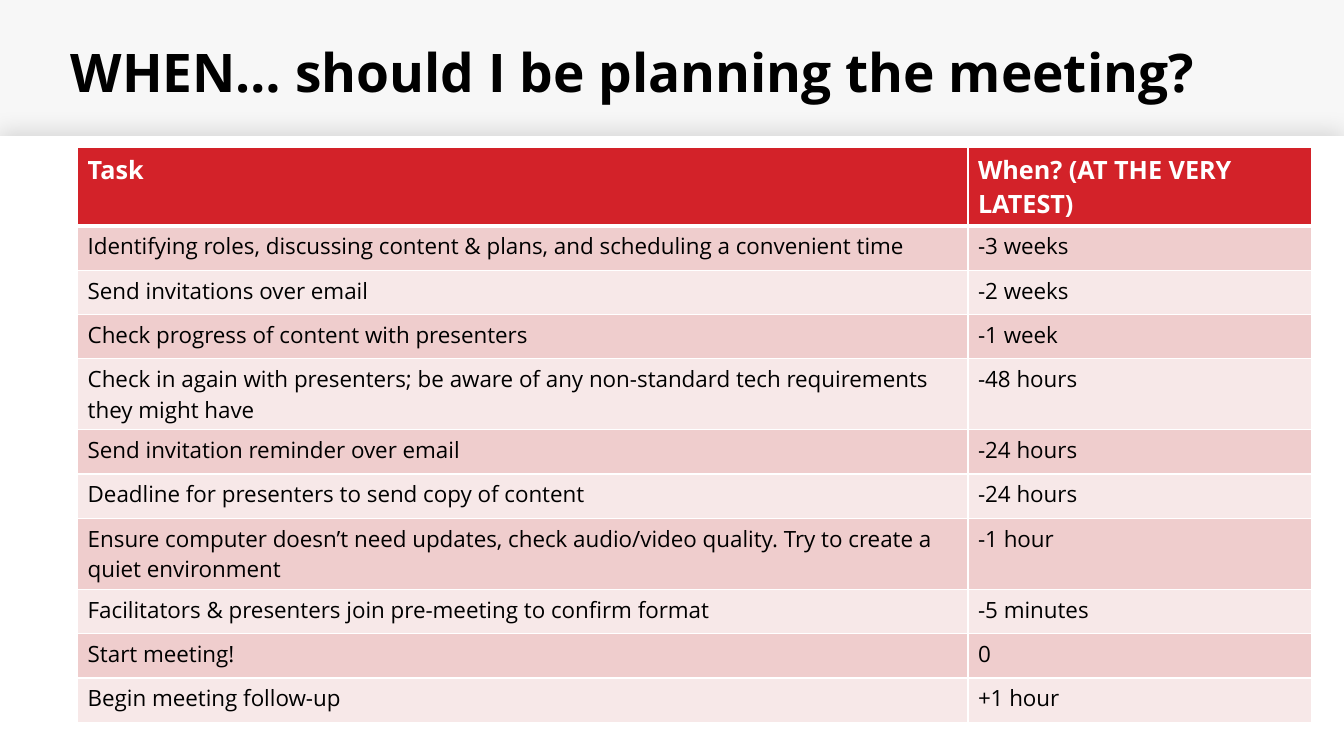
from dataclasses import dataclass

from lxml.etree import SubElement
from pptx import Presentation
from pptx.dml.color import RGBColor
from pptx.enum.shapes import MSO_SHAPE
from pptx.enum.text import MSO_ANCHOR, MSO_AUTO_SIZE, PP_ALIGN
from pptx.oxml.ns import qn
from pptx.shapes.autoshape import Shape
from pptx.slide import Slide
from pptx.table import _Cell
from pptx.text.text import _Paragraph
from pptx.util import Emu, Pt

SCALE = 9144
FONT = "Open Sans"
BLACK = RGBColor(0x00, 0x00, 0x00)
WHITE = RGBColor(0xFF, 0xFF, 0xFF)
GREY = RGBColor(0xF7, 0xF7, 0xF7)
RED = RGBColor(0xD3, 0x22, 0x29)
ROSE = RGBColor(0xEF, 0xCD, 0xCD)
BLUSH = RGBColor(0xF7, 0xE8, 0xE8)


@dataclass(frozen=True)
class Panel:
    left: int
    top: int
    width: int
    height: int
    color: RGBColor


@dataclass(frozen=True)
class Step:
    task: str
    when: str


PANELS = [
    Panel(-1, -1, 1334, 579, GREY),
    Panel(-1, 135, 1334, 615, WHITE),
]
STEPS = [
    Step("Task", "When? (AT THE VERY LATEST)"),
    Step("Identifying roles, discussing content & plans, and scheduling a convenient time", "-3 weeks"),
    Step("Send invitations over email", "-2 weeks"),
    Step("Check progress of content with presenters", "-1 week"),
    Step("Check in again with presenters; be aware of any non-standard tech requirements they might have", "-48 hours"),
    Step("Send invitation reminder over email", "-24 hours"),
    Step("Deadline for presenters to send copy of content", "-24 hours"),
    Step("Ensure computer doesn’t need updates, check audio/video quality. Try to create a quiet environment", "-1 hour"),
    Step("Facilitators & presenters join pre-meeting to confirm format", "-5 minutes"),
    Step("Start meeting!", "0"),
    Step("Begin meeting follow-up", "+1 hour"),
]
WIDTHS = (883, 341)
ROW = 44


def px(count: int) -> Emu:
    return Emu(count * SCALE)


def style(para: _Paragraph, size: int, color: RGBColor, bold: bool) -> None:
    for run in para.runs:
        run.font.name = FONT
        run.font.size = Pt(size)
        run.font.bold = bold
        run.font.color.rgb = color


def draw_panel(slide: Slide, panel: Panel) -> Shape:
    shape = slide.shapes.add_shape(
        MSO_SHAPE.RECTANGLE, px(panel.left), px(panel.top), px(panel.width), px(panel.height)
    )
    shape.shadow.inherit = False
    shape.fill.solid()
    shape.fill.fore_color.rgb = panel.color
    shape.line.fill.background()
    return shape


def add_shadow(shape: Shape) -> None:
    effects = shape._element.spPr.find(qn("a:effectLst"))
    shadow = SubElement(
        effects, qn("a:outerShdw"), blurRad=str(Pt(16)), dist=str(Pt(3)),
        dir=str(279 * 60000), algn="ctr", rotWithShape="0",
    )
    color = SubElement(shadow, qn("a:srgbClr"), val=str(BLACK))
    SubElement(color, qn("a:alpha"), val="12000")


def draw_title(slide: Slide) -> None:
    title = slide.shapes.title
    title.left, title.top = px(60), px(14)
    title.width, title.height = px(1242), px(121)
    frame = title.text_frame
    frame.text = "WHEN… should I be planning the meeting?"
    frame.word_wrap = True
    frame.auto_size = MSO_AUTO_SIZE.NONE
    frame.vertical_anchor = MSO_ANCHOR.MIDDLE
    para = frame.paragraphs[0]
    para.alignment = PP_ALIGN.LEFT
    para.line_spacing = 0.9
    style(para, 38, BLACK, True)
    slide.shapes._spTree.append(title._element)


def add_edges(cell: _Cell, row: int) -> None:
    widths = {"L": 1, "R": 1, "T": 3 if row == 1 else 1, "B": 3 if row == 0 else 1}
    props = cell._tc.get_or_add_tcPr()
    for side, width in widths.items():
        line = SubElement(props, qn(f"a:ln{side}"), w=str(Pt(width)))
        fill = SubElement(line, qn("a:solidFill"))
        SubElement(fill, qn("a:srgbClr"), val=str(WHITE))


def draw_cell(cell: _Cell, text: str, row: int) -> None:
    head = row == 0
    cell.text_frame.text = text
    style(cell.text_frame.paragraphs[0], 18 if head else 16, WHITE if head else BLACK, head)
    add_edges(cell, row)
    cell.fill.solid()
    cell.fill.fore_color.rgb = RED if head else ROSE if row % 2 else BLUSH


def draw_table(slide: Slide) -> None:
    table = slide.shapes.add_table(
        len(STEPS), len(WIDTHS), px(77), px(146), px(sum(WIDTHS)), px(ROW * len(STEPS))
    ).table
    for column, width in zip(table.columns, WIDTHS):
        column.width = px(width)
    for row, step in enumerate(STEPS):
        table.rows[row].height = px(ROW)
        for col, text in enumerate((step.task, step.when)):
            draw_cell(table.cell(row, col), text, row)


def main() -> None:
    deck = Presentation()
    deck.slide_width, deck.slide_height = px(1333), px(750)
    slide = deck.slides.add_slide(deck.slide_layouts.get_by_name("Title Only"))
    shapes = [draw_panel(slide, panel) for panel in PANELS]
    add_shadow(shapes[-1])
    draw_title(slide)
    draw_table(slide)
    deck.save("out.pptx")


if __name__ == "__main__":
    main()
